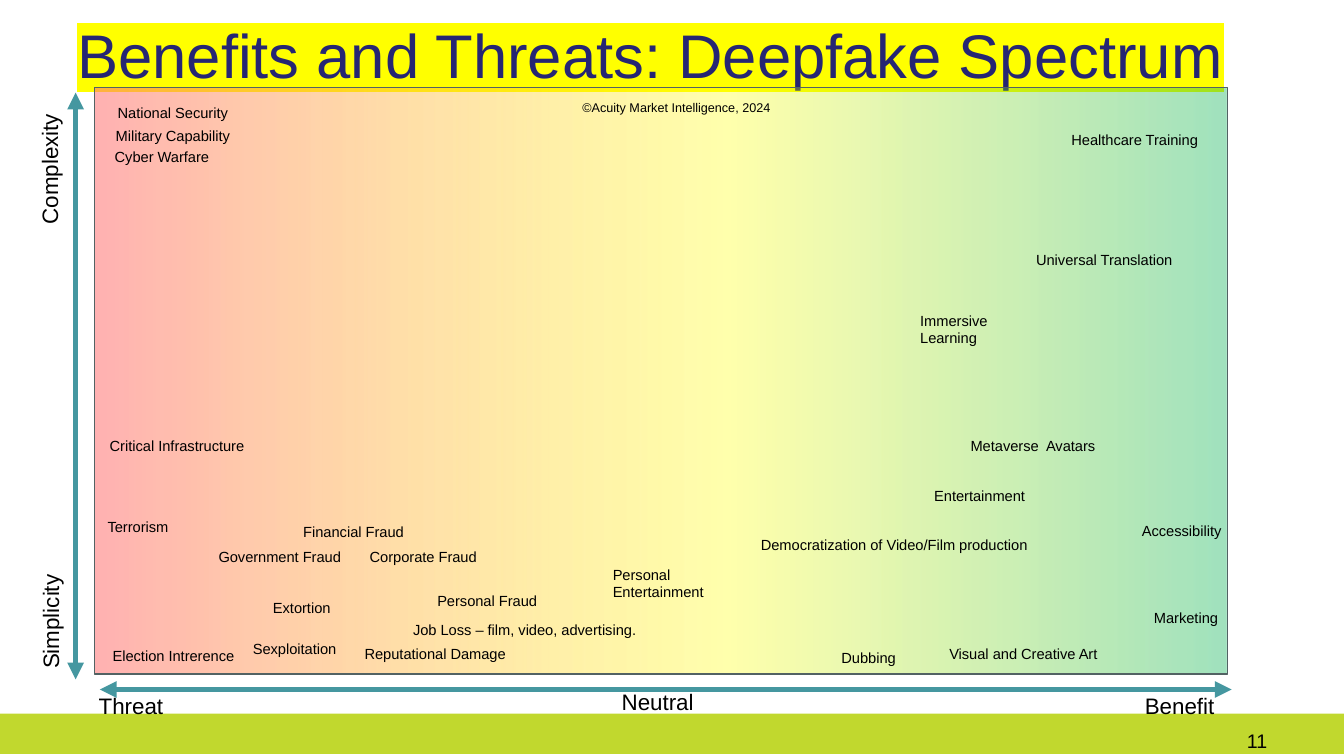
import pptx
import pptx.util
import pptx.dml.color
import pptx.enum.shapes
import pptx.enum.text
import pptx.oxml.ns
from lxml import etree

Pt = pptx.util.Pt
qn = pptx.oxml.ns.qn
ALIGN = pptx.enum.text.PP_ALIGN
ANCHOR = pptx.enum.text.MSO_ANCHOR

# Spectrum stops: position %, colour, opacity %
SPECTRUM = [(0, "FF7071", 54), (56, "FFFF00", 32), (100, "00B050", 37)]

# Axis captions: text, left, top, rotation
CAPTIONS = [
    ("Complexity", -25.9, 92.9, 270),
    ("Simplicity", -25.2, 410.4, 270),
    ("Threat", 63.4, 491, 0),
    ("Benefit", 810.7, 491, 0),
    ("Neutral", 437, 488.2, 0),
]

# Uses of deepfakes: text, left, top, width
USES = [
    ("National Security", 77, 70.6, 117),
    ("Military Capability", 75.6, 87.1, 122),
    ("Cyber Warfare", 74.9, 102.2, 122),
    ("Critical Infrastructure", 71.3, 308.2, 122),
    ("Terrorism", 69.8, 366.5, 66),
    ("Financial Fraud", 209.5, 370.1, 120),
    ("Government Fraud", 149, 387.4, 120),
    ("Corporate Fraud", 257, 388.1, 101),
    ("Personal Fraud", 305.3, 419, 89),
    ("Extortion", 187.9, 424.1, 78),
    ("Job Loss – film, video, advertising.", 288, 439.9, 222),
    ("Sexploitation", 173.5, 453.6, 101),
    ("Reputational Damage", 253.4, 457.2, 122),
    ("Election Intrerence", 73.4, 458.6, 114),
    ("Personal Entertainment", 430.6, 400.3, 99),
    ("Democratization of Video/Film production", 536.4, 379.4, 228),
    ("Dubbing", 594, 460.1, 77),
    ("Visual and Creative Art", 671, 457.2, 130),
    ("Marketing", 817.2, 431.3, 66),
    ("Accessibility", 808.6, 369.4, 81),
    ("Entertainment", 660.2, 344.2, 104),
    ("Metaverse  Avatars", 686.2, 308.2, 104),
    ("Immersive Learning", 650.2, 218.9, 103),
    ("Universal Translation", 733, 175.7, 112),
    ("Healthcare Training", 758.2, 90, 118),
]


def rgb(value):
    return pptx.dml.color.RGBColor.from_string(value)


def add_element(parent, tag, **attributes):
    return etree.SubElement(parent, qn(tag), attributes)


def add_text(slide, text, left, top, width, height, size, color="000000",
             align=ALIGN.LEFT, anchor=ANCHOR.TOP, rotation=0):
    """Add a wrapping one-run text box and return its run."""
    box = slide.shapes.add_textbox(Pt(left), Pt(top), Pt(width), Pt(height))
    box.rotation = rotation
    frame = box.text_frame
    frame.word_wrap = True
    frame.vertical_anchor = anchor
    paragraph = frame.paragraphs[0]
    paragraph.alignment = align
    run = paragraph.add_run()
    run.text = text
    run.font.size = Pt(size)
    run.font.name = "Arial"
    run.font.color.rgb = rgb(color)
    return run


def highlight(run, color):
    marker = etree.Element(qn("a:highlight"))
    add_element(marker, "a:srgbClr", val=color)
    run.font._element.find(qn("a:solidFill")).addnext(marker)


def add_rectangle(slide, left, top, width, height):
    rectangle = slide.shapes.add_shape(
        pptx.enum.shapes.MSO_SHAPE.RECTANGLE,
        Pt(left), Pt(top), Pt(width), Pt(height))
    rectangle.shadow.inherit = False
    return rectangle


def add_footer_band(slide):
    band = add_rectangle(slide, -7.2, 509.8, 975.6, 28.8)
    band.fill.solid()
    band.fill.fore_color.rgb = rgb("C1D82E")
    band.line.fill.background()


def add_spectrum(slide):
    field = add_rectangle(slide, 67.7, 62.6, 809.3, 419)
    field.line.color.rgb = rgb("526263")
    field.line.width = Pt(1)
    field.fill.gradient()
    field.fill.gradient_angle = 0
    stops = field._element.spPr.find(".//" + qn("a:gsLst"))
    stops.clear()
    for position, color, opacity in SPECTRUM:
        stop = add_element(stops, "a:gs", pos=str(position * 1000))
        shade = add_element(stop, "a:srgbClr", val=color)
        add_element(shade, "a:alpha", val=str(opacity * 1000))


def add_axis(slide, x1, y1, x2, y2):
    """Draw an axis with an arrowhead at each end."""
    axis = slide.shapes.add_connector(
        pptx.enum.shapes.MSO_CONNECTOR.STRAIGHT, Pt(x1), Pt(y1), Pt(x2), Pt(y2))
    axis.line.color.rgb = rgb("4597A0")
    axis.line.width = Pt(4)
    stroke = axis.line._get_or_add_ln()
    for end in ("a:headEnd", "a:tailEnd"):
        add_element(stroke, end, type="triangle")
    add_element(axis._element.spPr, "a:effectLst")


def main():
    presentation = pptx.Presentation()
    presentation.slide_width = Pt(960)
    presentation.slide_height = Pt(540)
    slide = presentation.slides.add_slide(presentation.slide_layouts[6])

    add_footer_band(slide)
    title = add_text(slide, "Benefits and Threats: Deepfake Spectrum",
                     48.2, -6.5, 864, 90, 44, "262673", anchor=ANCHOR.MIDDLE)
    highlight(title, "FFFF00")
    add_text(slide, "11", 688.3, 517, 224, 22.3, 14, align=ALIGN.RIGHT)

    add_spectrum(slide)
    add_axis(slide, 71.3, 492.5, 879.8, 492.5)
    add_axis(slide, 54, 485.3, 54, 66.2)

    for text, left, top, rotation in CAPTIONS:
        add_text(slide, text, left, top, 122.4, 26.6, 16, rotation=rotation)
    for text, left, top, width in USES:
        add_text(slide, text, left, top, width, 20.2, 10.5)
    add_text(slide, "©Acuity Market Intelligence, 2024",
             396, 67.7, 174.2, 18, 9, align=ALIGN.CENTER)

    presentation.save("out.pptx")


if __name__ == "__main__":
    main()
